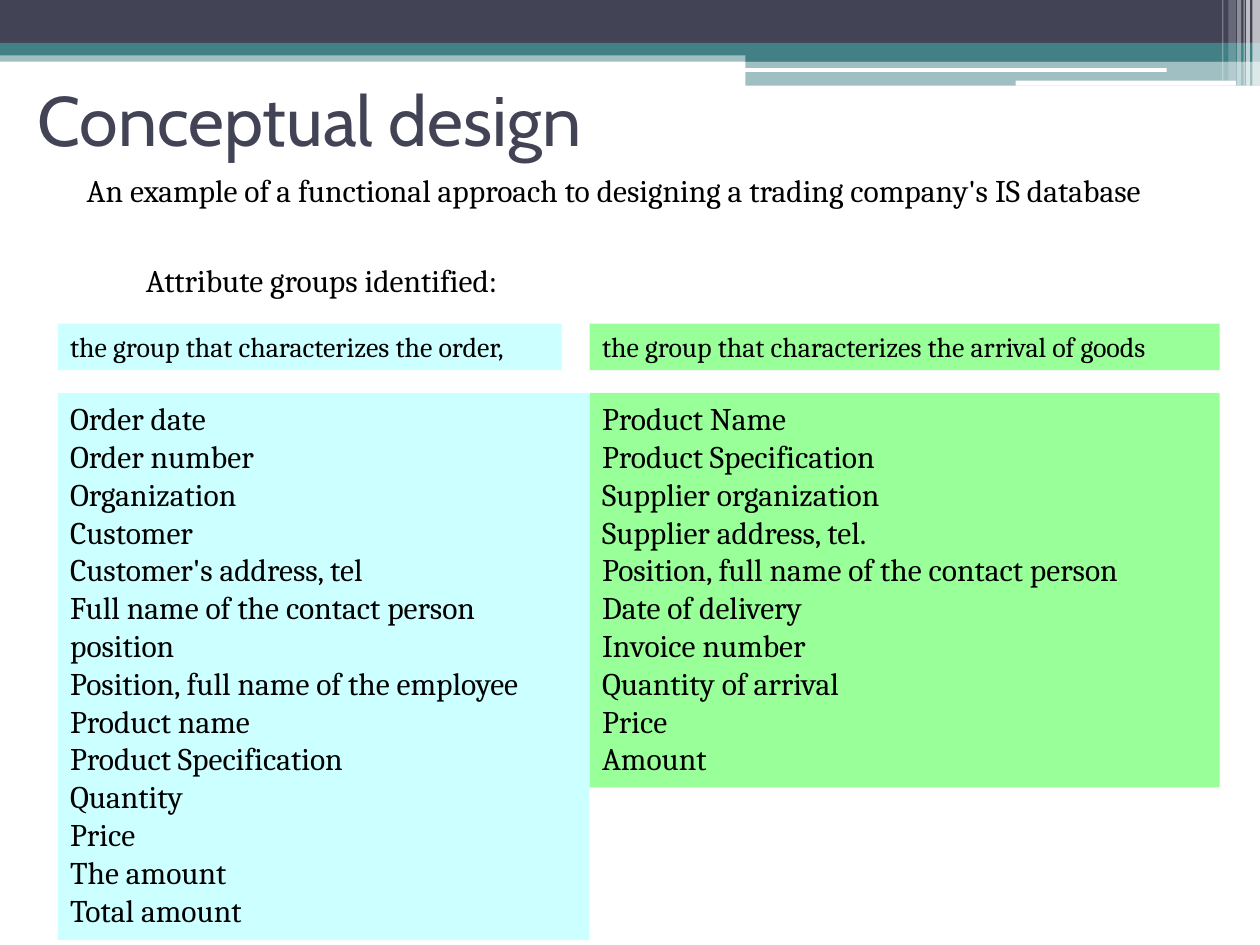
"""Build the conceptual design slide with its two attribute groups."""
from lxml.etree import SubElement
from pptx import Presentation
from pptx.dml.color import RGBColor
from pptx.enum.shapes import MSO_SHAPE as Shape
from pptx.enum.text import MSO_ANCHOR as Anchor, PP_ALIGN as Align
from pptx.oxml.ns import qn
from pptx.util import Pt

COLORS = {"navy": "424456", "teal": "438086", "white": "FFFFFF",
          "text": "000000", "order": "CCFFFF", "arrival": "99FF99"}
BANDS = [
    (0, 28.8, 720, 6.5, "teal", 50),
    (0, 0, 720, 24.5, "navy", 100),
    (0, 24.5, 720, 7.2, "teal", 100),
    (426, 28.1, 294, 7.2, "teal", 100),
    (426, 34.6, 294, 14.4, "teal", 50),
]
LINES = [(425.5, 38.9, 241.2, 2.2), (580.3, 46.1, 126, 2.9)]
STRIPES = [(715.7, 4.3, 49, 65), (712.1, 2.2, 49, 65), (710.6, 0.7, 49, 60),
           (707, 2.2, 49, 40), (702, 4.3, 46.1, 20), (698.4, 0.7, 46.1, 30)]
ORDER = ["Order date", "Order number", "Organization", "Customer",
         "Customer's address, tel", "Full name of the contact person position",
         "Position, full name of the employee", "Product name",
         "Product Specification", "Quantity", "Price", "The amount",
         "Total amount"]
ARRIVAL = ["Product Name", "Product Specification", "Supplier organization",
           "Supplier address, tel.", "Position, full name of the contact person",
           "Date of delivery", "Invoice number", "Quantity of arrival",
           "Price", "Amount"]


def rgb(name):
    return RGBColor.from_string(COLORS[name])


def add_block(s, x, y, w, h, color, opacity=100, kind=Shape.RECTANGLE):
    sp = s.shapes.add_shape(kind, Pt(x), Pt(y), Pt(w), Pt(h))
    sp.shadow.inherit = False
    sp.line.fill.background()
    sp.fill.solid()
    sp.fill.fore_color.rgb = rgb(color)
    if opacity < 100:
        clr = sp.fill._xPr.find(".//" + qn("a:srgbClr"))
        SubElement(clr, qn("a:alpha"), val=str(opacity * 1000))
    return sp


def write(tf, lines, size, font="Cambria", color="text", anchor=Anchor.TOP):
    tf.word_wrap = True
    tf.vertical_anchor = anchor
    for i, line in enumerate(lines):
        p = tf.add_paragraph() if i else tf.paragraphs[0]
        p.alignment = Align.LEFT
        r = p.add_run()
        r.text = line
        r.font.size = Pt(size)
        r.font.name = font
        r.font.color.rgb = rgb(color)


def add_title(s, text):
    sp = s.shapes.title
    sp.left, sp.top, sp.width, sp.height = Pt(14.4), Pt(25.9), Pt(648), Pt(84.2)
    write(sp.text_frame, [text], 40, "Cabin", "navy", Anchor.MIDDLE)


def add_note(s, x, y, w, h, text):
    sp = s.shapes.add_textbox(Pt(x), Pt(y), Pt(w), Pt(h))
    write(sp.text_frame, [text], 18)


def add_group(s, x, color, heading, head_w, items, list_w, list_h):
    head = add_block(s, x, 185, head_w, 26.6, color)
    write(head.text_frame, [heading], 16)
    body = add_block(s, x, 224.6, list_w, list_h, color)
    write(body.text_frame, items, 18)


def add_banner(s):
    for band in BANDS:
        add_block(s, *band)
    for line in LINES:
        add_block(s, *line, "white", kind=Shape.ROUNDED_RECTANGLE)
    for x, w, h, opacity in STRIPES:
        add_block(s, x, 0, w, h, "white", opacity)


def main():
    prs = Presentation()
    prs.slide_width, prs.slide_height = Pt(720), Pt(540)
    s = prs.slides.add_slide(prs.slide_layouts[5])
    add_banner(s)
    add_title(s, "Conceptual design")
    add_note(s, 42.5, 94.3, 640.8, 51.1, "An example of a functional approach "
             "to designing a trading company's IS database")
    add_note(s, 76.3, 145.4, 235.4, 28.8, "Attribute groups identified:")
    add_group(s, 33, "order", "the group that characterizes the order,",
              288, ORDER, 303.8, 312.5)
    add_group(s, 337, "arrival",
              "the group that characterizes the arrival of goods",
              360, ARRIVAL, 360, 225.4)
    prs.save("out.pptx")


if __name__ == "__main__":
    main()
